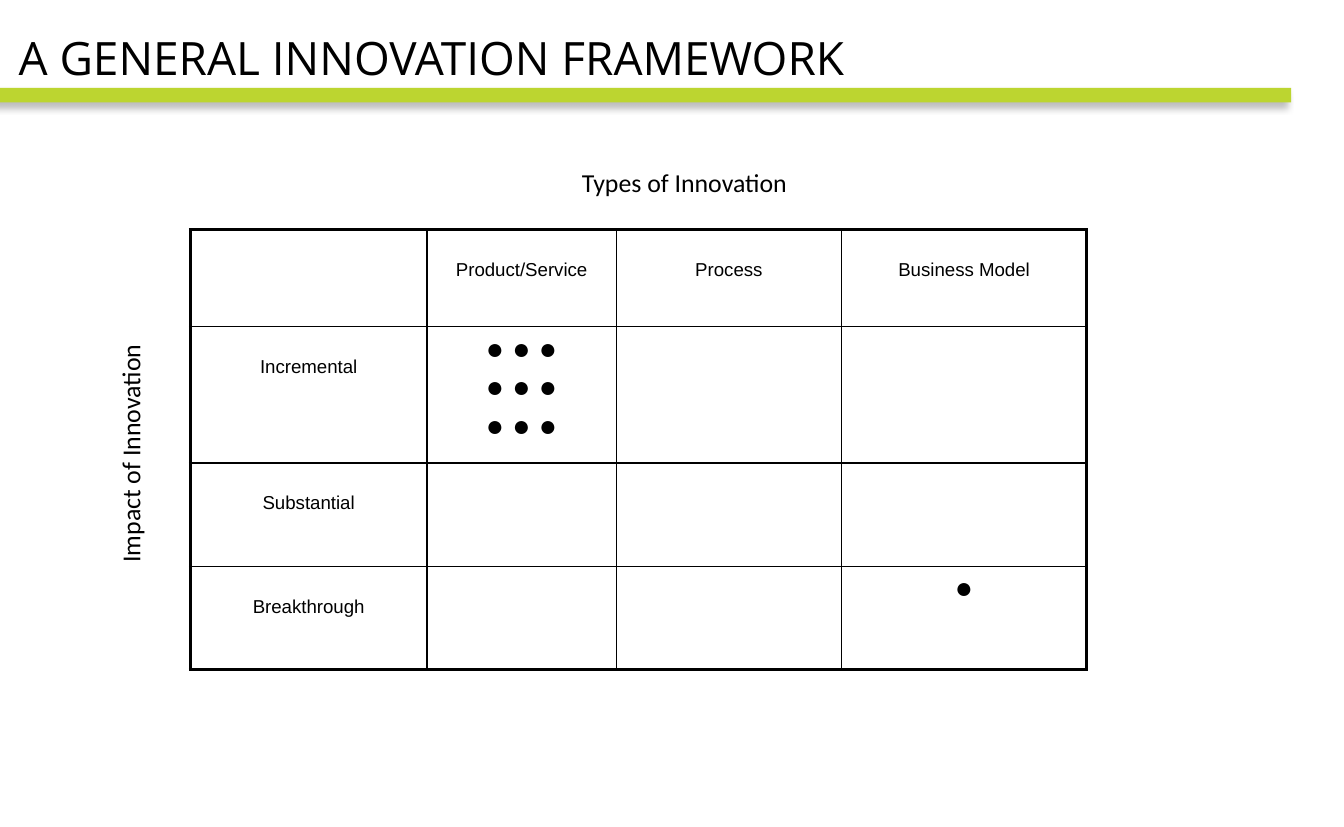
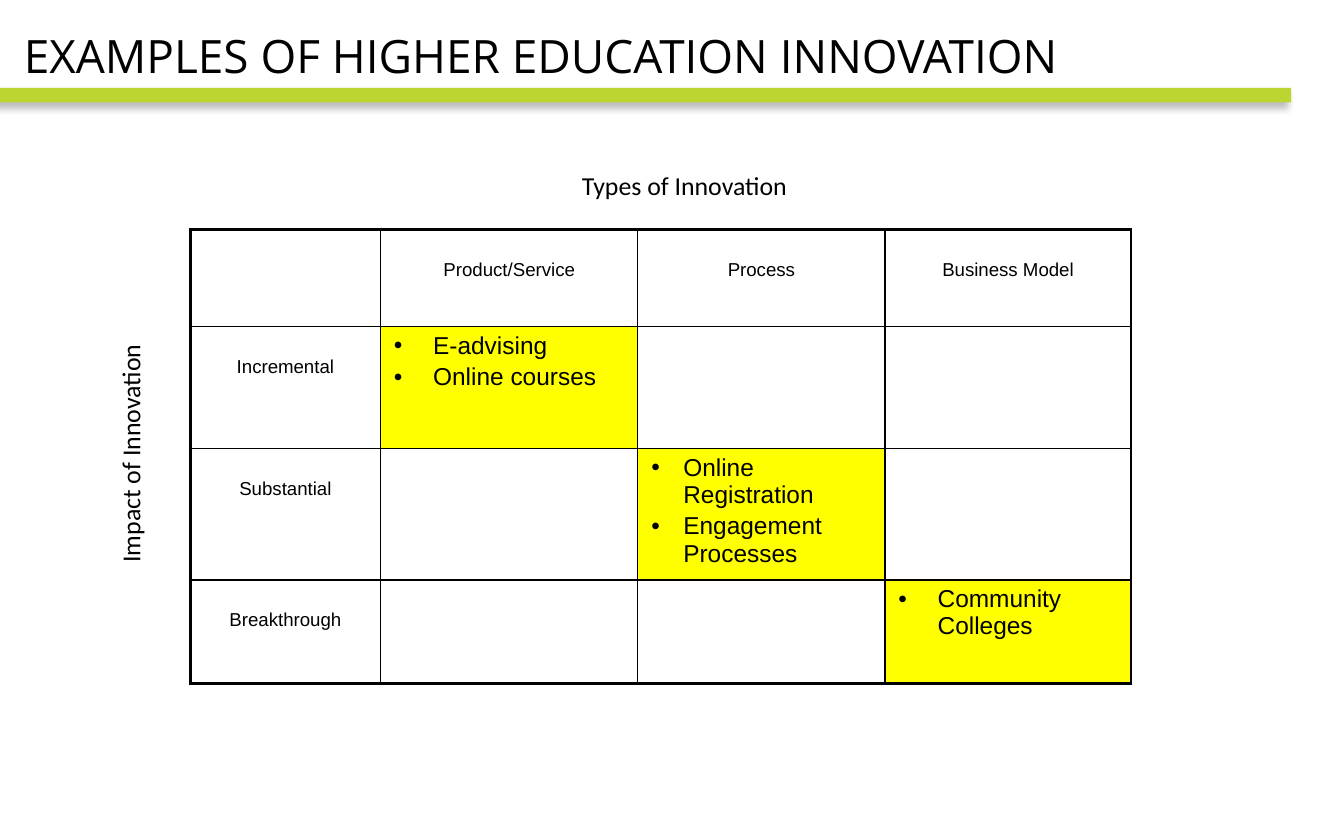
from lxml.etree import SubElement
from pptx import Presentation
from pptx.dml.color import RGBColor
from pptx.enum.shapes import MSO_SHAPE as Shape
from pptx.enum.text import MSO_ANCHOR as Anchor, MSO_AUTO_SIZE as AutoSize, PP_ALIGN as Align
from pptx.oxml import parse_xml
from pptx.oxml.ns import nsdecls, qn
from pptx.util import Emu, Pt

BLACK = RGBColor(0x00, 0x00, 0x00)
LIME = RGBColor(0xBC, 0xD5, 0x30)
YELLOW = RGBColor(0xFF, 0xFF, 0x00)
TITLE_FONT, AXIS_FONT, CELL_FONT = "Open Sans", "Calibri", "Arial"
TITLE_SIZE, AXIS_SIZE, LABEL_SIZE, DOT_SIZE, EXAMPLE_SIZE = 32, 18, 13, 21, 17
OUTER, INNER = 2.25, 1
LABEL_DROP = 29

INNOVATION_TYPES = ["Product/Service", "Process", "Business Model"]
IMPACTS = ["Incremental", "Substantial", "Breakthrough"]

SLIDES = [
    {
        "title": "A GENERAL INNOVATION FRAMEWORK",
        "title_box": (18, -6, 1170, 88),
        "types_top": 156,
        "columns": [229, 183, 218, 237],
        "rows": [94, 132, 100, 100],
        "dots": {
            ("Incremental", "Product/Service"): ["● ● ●"] * 3,
            ("Breakthrough", "Business Model"): ["●"],
        },
        "examples": {},
    },
    {
        "title": "EXAMPLES OF HIGHER EDUCATION INNOVATION",
        "title_box": (23, 11, 1219, 69),
        "types_top": 159,
        "columns": [184, 249, 239, 238],
        "rows": [94, 118, 121, 100],
        "dots": {},
        "examples": {
            ("Incremental", "Product/Service"): (38, ["E-advising", "Online courses"]),
            ("Substantial", "Process"): (31, ["Online Registration", "Engagement Processes"]),
            ("Breakthrough", "Business Model"): (38, ["Community Colleges"]),
        },
    },
]


def px(length):
    return Emu(length * 9144)


def style(paragraph, font, size):
    for run in paragraph.runs:
        run.font.name = font
        run.font.size = Pt(size)
        run.font.color.rgb = BLACK


def add_band(slide):
    band = slide.shapes.add_shape(Shape.RECTANGLE, px(-32), px(85), px(1281), px(14))
    band.fill.solid()
    band.fill.fore_color.rgb = LIME
    band.line.fill.background()
    band.shadow.inherit = False
    effects = band.element.spPr.find(qn("a:effectLst"))
    effects.append(parse_xml(
        f'<a:outerShdw {nsdecls("a")} blurRad="63500" dist="63500" dir="8100000">'
        f'<a:srgbClr val="{BLACK}"><a:alpha val="25000"/></a:srgbClr></a:outerShdw>'))


def add_title(slide, title, box):
    frame = slide.shapes.add_textbox(*map(px, box)).text_frame
    frame.margin_left = frame.margin_right = frame.margin_top = frame.margin_bottom = 0
    frame.word_wrap = True
    frame.vertical_anchor = Anchor.BOTTOM
    frame.text = title
    style(frame.paragraphs[0], TITLE_FONT, TITLE_SIZE)


def add_axis(slide, caption, box, rotation=0):
    axis = slide.shapes.add_textbox(*map(px, box))
    axis.rotation = rotation
    frame = axis.text_frame
    frame.word_wrap = False
    frame.auto_size = AutoSize.SHAPE_TO_FIT_TEXT
    frame.text = caption
    style(frame.paragraphs[0], AXIS_FONT, AXIS_SIZE)


def set_borders(cell, widths):
    properties = cell._tc.get_or_add_tcPr()
    for side, width in zip("LRTB", widths):
        properties.append(parse_xml(
            f'<a:ln{side} {nsdecls("a")} w="{Pt(width)}"><a:solidFill>'
            f'<a:srgbClr val="{BLACK}"/></a:solidFill></a:ln{side}>'))


def write_cell(cell, lines, size, indent=0):
    frame = cell.text_frame
    frame.text = "\n".join(lines)
    for position, paragraph in enumerate(frame.paragraphs):
        if indent:
            properties = paragraph._p.get_or_add_pPr()
            properties.set("marL", str(px(indent)))
            properties.set("indent", str(px(-indent)))
            SubElement(properties, qn("a:buFont"), typeface=CELL_FONT)
            SubElement(properties, qn("a:buChar"), char="•")
        else:
            paragraph.alignment = Align.CENTER
        if position:
            paragraph.space_before = Pt(round(size * 0.16, 1))
        style(paragraph, CELL_FONT, size)


def add_matrix(slide, content):
    columns, rows = content["columns"], content["rows"]
    matrix = slide.shapes.add_table(
        len(rows), len(columns), px(184), px(222), px(sum(columns)), px(sum(rows))).table
    matrix.first_row = matrix.horz_banding = False
    for column, width in zip(matrix.columns, columns):
        column.width = px(width)
    for row, height in zip(matrix.rows, rows):
        row.height = px(height)
    for r, impact in enumerate([""] + IMPACTS):
        for c, kind in enumerate([""] + INNOVATION_TYPES):
            cell = matrix.cell(r, c)
            cell.margin_left = cell.margin_right = px(13)
            cell.margin_top = cell.margin_bottom = px(5)
            edges = (c == 0, c == len(columns) - 1, r == 0, r == len(rows) - 1)
            set_borders(cell, [OUTER if edge else INNER for edge in edges])
            cell.fill.background()
            key = (impact, kind)
            if key in content["dots"]:
                write_cell(cell, content["dots"][key], DOT_SIZE)
            elif key in content["examples"]:
                indent, examples = content["examples"][key]
                write_cell(cell, examples, EXAMPLE_SIZE, indent)
                cell.fill.solid()
                cell.fill.fore_color.rgb = YELLOW
            elif (r == 0) != (c == 0):
                cell.margin_top = px(LABEL_DROP)
                write_cell(cell, [impact or kind], LABEL_SIZE)


def main():
    deck = Presentation()
    deck.slide_width, deck.slide_height = px(1300), px(800)
    for content in SLIDES:
        slide = deck.slides.add_slide(deck.slide_layouts[6])
        add_band(slide)
        add_title(slide, content["title"], content["title_box"])
        add_matrix(slide, content)
        add_axis(slide, "Types of Innovation", (553, content["types_top"], 221, 40))
        add_axis(slide, "Impact of Innovation", (9, 417, 234, 40), 270)
    deck.save("out.pptx")


if __name__ == "__main__":
    main()
